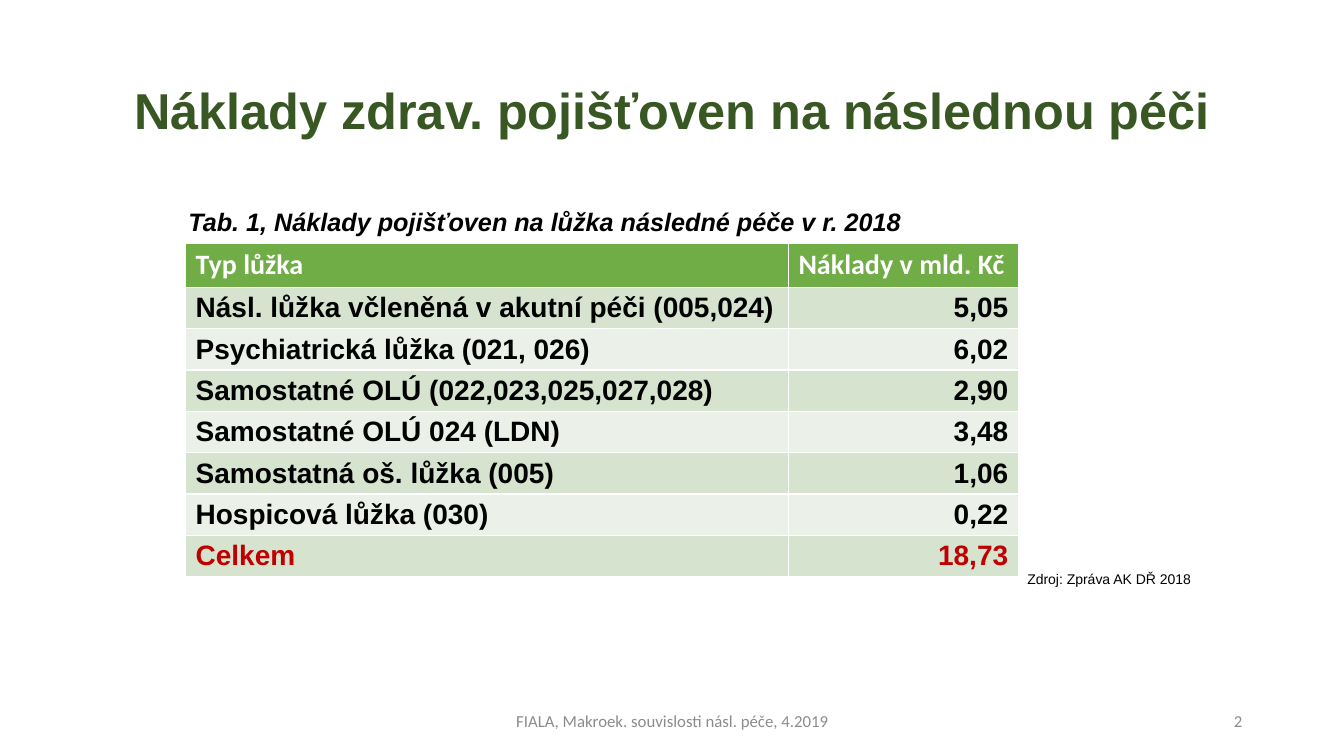
from pptx import Presentation
from pptx.dml.color import RGBColor
from pptx.enum.text import MSO_ANCHOR as Anchor, PP_ALIGN as Align
from pptx.util import Inches, Pt

GREEN = RGBColor(0x38, 0x57, 0x23)
HEAD = RGBColor(0x70, 0xAD, 0x47)
BANDS = [RGBColor(0xEB, 0xF1, 0xE9), RGBColor(0xD5, 0xE3, 0xCF)]
RED = RGBColor(0xC0, 0x00, 0x00)
GREY = RGBColor(0x8C, 0x8C, 0x8C)
BLACK = RGBColor(0, 0, 0)
WHITE = RGBColor(255, 255, 255)

deck = Presentation()
deck.slide_width, deck.slide_height = Inches(13.33), Inches(7.5)
slide = deck.slides.add_slide(deck.slide_layouts[6])


def write(frame, text, align, color, **form):
    para = frame.paragraphs[0]
    para.alignment = align
    run = para.add_run()
    run.text = text
    run.font.color.rgb = color
    for key, value in form.items():
        setattr(run.font, key, value)


rows = [
    ("Typ lůžka", "Náklady v mld. Kč"),
    ("Násl. lůžka včleněná v akutní péči (005,024)", "5,05"),
    ("Psychiatrická lůžka (021, 026)", "6,02"),
    ("Samostatné OLÚ (022,023,025,027,028)", "2,90"),
    ("Samostatné OLÚ 024 (LDN)", "3,48"),
    ("Samostatná oš. lůžka (005)", "1,06"),
    ("Hospicová lůžka (030)", "0,22"),
    ("Celkem", "18,73"),
]
last = len(rows) - 1
grid = slide.shapes.add_table(
    len(rows), 2, Inches(1.84), Inches(2.41), Inches(8.26), Inches(0.41 * len(rows))
).table
for column, width in zip(grid.columns, (5.98, 2.28)):
    column.width = Inches(width)
for r, row in enumerate(rows):
    for c, text in enumerate(row):
        cell = grid.cell(r, c)
        cell.fill.solid()
        cell.fill.fore_color.rgb = BANDS[r % 2] if r else HEAD
        align = Align.RIGHT if r and c else Align.LEFT
        color = {0: WHITE, last: RED}.get(r, BLACK)
        font = "Arial" if r else "Calibri"
        write(cell.text_frame, text, align, color, name=font, size=Pt(20), bold=True)

title = dict(name="Arial", size=Pt(36), bold=True)
label = dict(name="Arial", size=Pt(18), bold=True, italic=True)
source = dict(name="Arial", size=Pt(10))
foot = dict(name="Calibri", size=Pt(12))
MID, TOP = Anchor.MIDDLE, Anchor.TOP
texts = [
    ("Náklady zdrav. pojišťoven na následnou péči",
     (0.92, 0.4, 11.5, 1.45), MID, Align.CENTER, GREEN, title),
    ("Tab. 1, Náklady pojišťoven na lůžka následné péče v r. 2018",
     (1.77, 2, 7.45, 0.71), TOP, Align.LEFT, BLACK, label),
    ("Zdroj: Zpráva AK DŘ 2018",
     (10.09, 5.61, 1.85, 0.27), TOP, Align.LEFT, BLACK, source),
    ("FIALA, Makroek. souvislosti násl. péče, 4.2019",
     (4.42, 6.95, 4.5, 0.4), MID, Align.CENTER, GREY, foot),
    ("2", (9.42, 6.95, 3, 0.4), MID, Align.RIGHT, GREY, foot),
]
for text, place, anchor, align, color, form in texts:
    frame = slide.shapes.add_textbox(*map(Inches, place)).text_frame
    frame.word_wrap = anchor == MID
    frame.vertical_anchor = anchor
    write(frame, text, align, color, **form)
    if form is title:
        frame.paragraphs[0].line_spacing = 0.9

deck.save("out.pptx")
